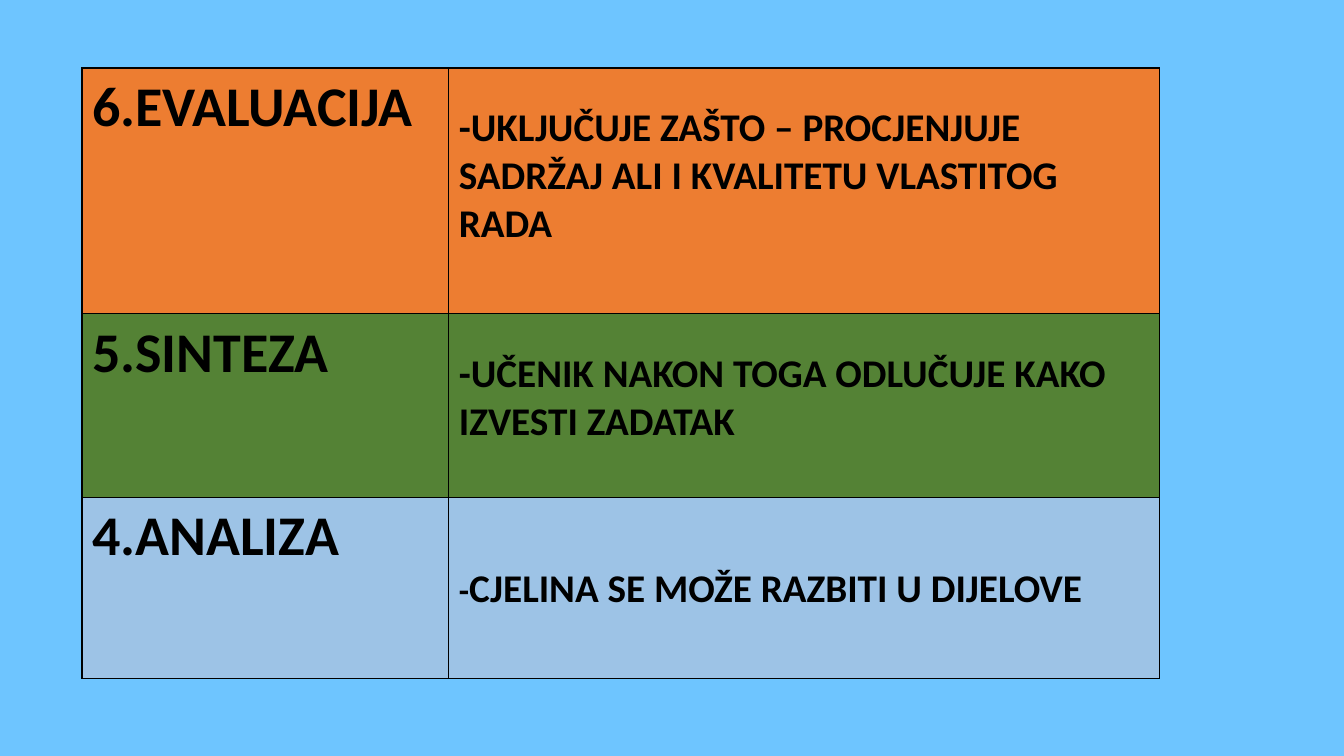
from lxml.etree import SubElement
from pptx import Presentation
from pptx.dml.color import RGBColor as Rgb
from pptx.enum.text import MSO_ANCHOR as Anchor
from pptx.oxml.ns import qn
from pptx.util import Inches, Pt

COLORS = {
    "sky": "6EC5FF",
    "ink": "000000",
    "evaluation": "ED7D31",
    "synthesis": "548235",
    "analysis": "9DC3E6",
}
WIDTH, HEIGHT = 13.33, 7.5
LEVEL_SIZE, DETAIL_SIZE = 40, 28
MARGIN, SPACER = 0.05, 0.31

# Each level: colour, share of slide height, name, spacers above detail, detail runs
LEVELS = [
    ("evaluation", 0.325, "6.EVALUACIJA", 1,
     [("-UKLJUČUJE ZAŠTO – PROCJENJUJE SADRŽAJ ALI I KVALITETU VLASTITOG RADA", DETAIL_SIZE)]),
    ("synthesis", 0.243, "5.SINTEZA", 1,
     [("-UČENIK NAKON TOGA ODLUČUJE KAKO IZVESTI ZADATAK", DETAIL_SIZE)]),
    ("analysis", 0.24, "4.ANALIZA", 2,
     [("-", 24), ("CJELINA SE MOŽE RAZBITI U DIJELOVE", DETAIL_SIZE)]),
]


class TaxonomySlide:
    font_format = {"name": "Calibri", "bold": True}

    def __init__(self, deck):
        self.slide = deck.slides.add_slide(deck.slide_layouts[6])

    def background(self, color):
        fill = self.slide.background.fill
        fill.solid()
        fill.fore_color.rgb = Rgb.from_string(COLORS[color])

    def table(self, left, top, column_shares, row_shares):
        """Add a plain table; every length is a share of the slide's size."""
        widths = [Inches(WIDTH * share) for share in column_shares]
        heights = [Inches(HEIGHT * share) for share in row_shares]
        table = self.slide.shapes.add_table(
            len(heights), len(widths), Inches(WIDTH * left), Inches(HEIGHT * top),
            sum(widths), sum(heights)).table
        table.first_row = table.horz_banding = False
        for column, width in zip(table.columns, widths):
            column.width = width
        for row, height in zip(table.rows, heights):
            row.height = height
        return table

    def cell(self, cell, color, runs, spacers=0):
        cell_format = {"vertical_anchor": Anchor.TOP,
                       "margin_top": Inches(MARGIN + spacers * SPACER)}
        for key, value in cell_format.items():
            setattr(cell, key, value)
        self.borders(cell)
        cell.fill.solid()
        cell.fill.fore_color.rgb = Rgb.from_string(COLORS[color])
        paragraph = cell.text_frame.paragraphs[0]
        for wording, size in runs:
            run = paragraph.add_run()
            run.text = wording
            for key, value in {**self.font_format, "size": Pt(size)}.items():
                setattr(run.font, key, value)
            run.font.color.rgb = Rgb.from_string(COLORS["ink"])

    def borders(self, cell):
        properties = cell._tc.get_or_add_tcPr()
        for side in ("a:lnL", "a:lnR", "a:lnT", "a:lnB"):
            line = SubElement(properties, qn(side), w=str(Pt(1)))
            fill = SubElement(line, qn("a:solidFill"))
            SubElement(fill, qn("a:srgbClr"), val=COLORS["ink"])


def main():
    deck = Presentation()
    deck.slide_width, deck.slide_height = Inches(WIDTH), Inches(HEIGHT)
    page = TaxonomySlide(deck)
    page.background("sky")
    table = page.table(0.061, 0.09, (0.273, 0.529), [level[1] for level in LEVELS])
    for row, (color, _, name, spacers, detail) in enumerate(LEVELS):
        page.cell(table.cell(row, 0), color, [(name, LEVEL_SIZE)])
        page.cell(table.cell(row, 1), color, detail, spacers)
    deck.save("out.pptx")


if __name__ == "__main__":
    main()
